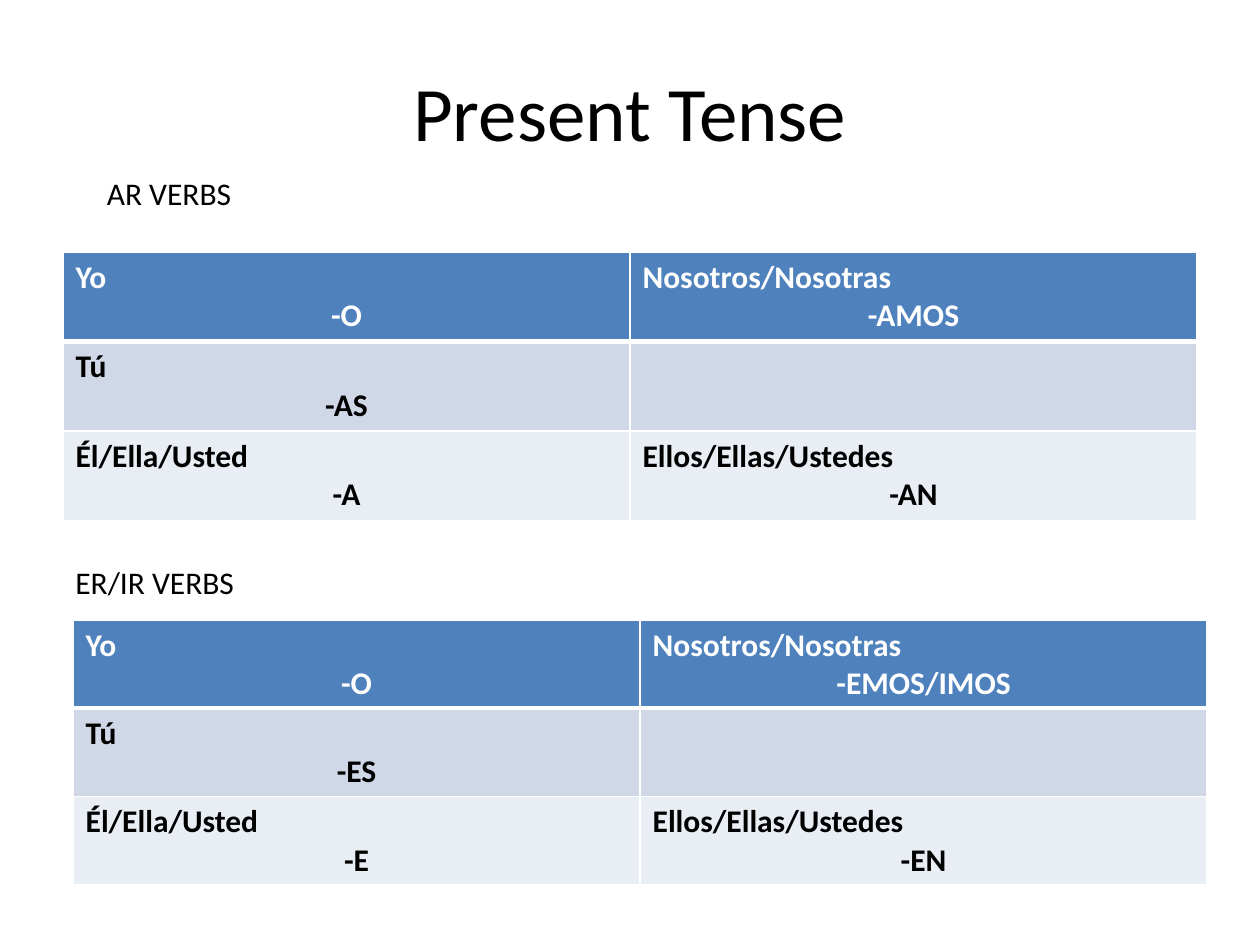
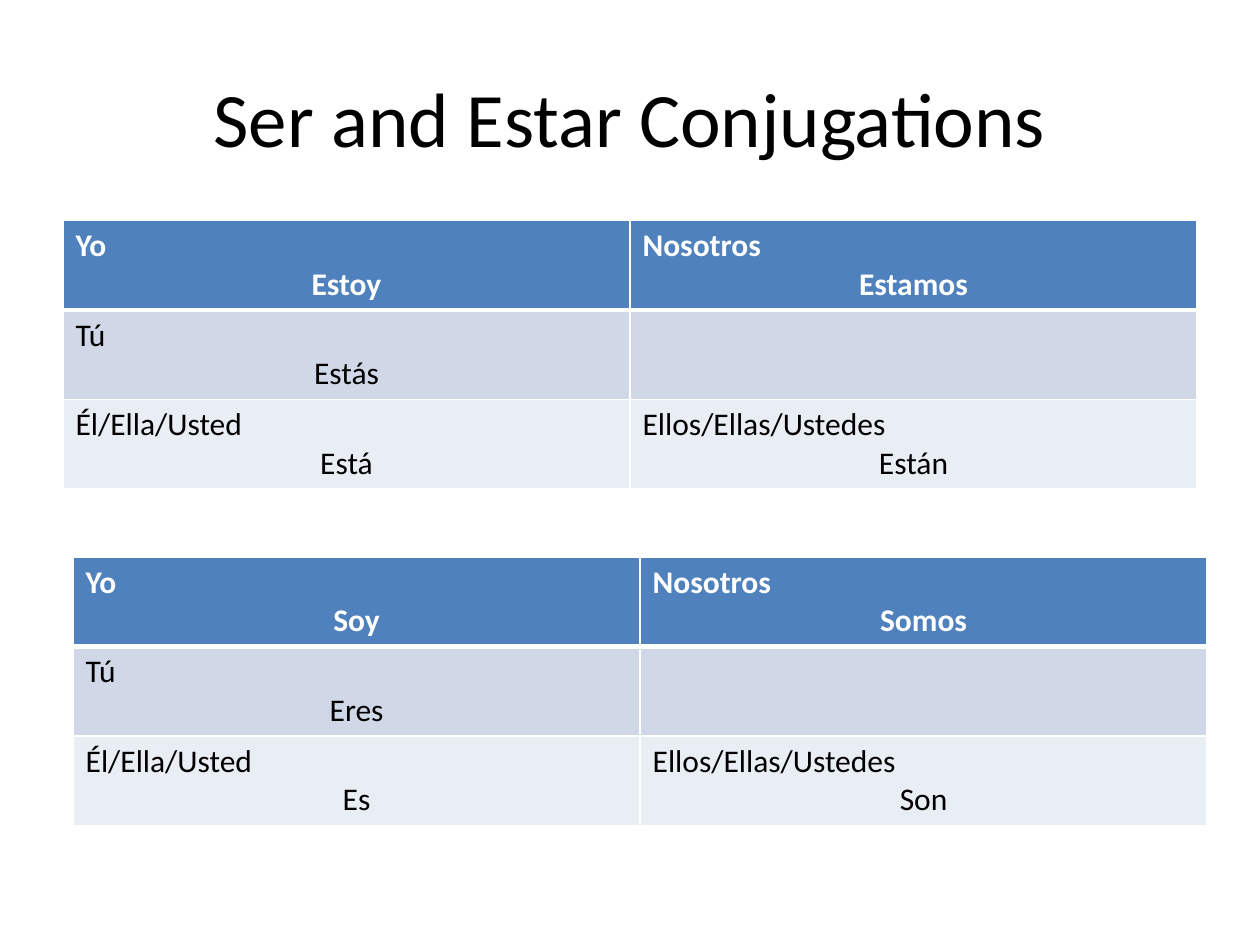
import pptx
import pptx.dml.color
import pptx.enum.text
import pptx.util
from lxml import etree
from pptx.oxml.ns import qn

Inches = pptx.util.Inches
Pt = pptx.util.Pt
ALIGN = pptx.enum.text.PP_ALIGN
FONT = "Calibri"
WHITE, BLACK = "FFFFFF", "000000"
ROW_FILLS = ["4F81BD", "D0D8E8", "E9EDF4"]
TABLE_W, ROW_H = 9, 0.7


def rgb(value):
    """Turn a hex string into a colour."""
    return pptx.dml.color.RGBColor.from_string(value)


def write(p, text, size=18, color=BLACK, bold=False, align=ALIGN.LEFT):
    """Put formatted text in a paragraph."""
    p.alignment = align
    r = p.add_run()
    r.text = text
    r.font.name = FONT
    r.font.size = Pt(size)
    r.font.bold = bold
    r.font.color.rgb = rgb(color)


def add_title_slide(prs, text, top):
    """Add a slide whose title starts at the given height."""
    s = prs.slides.add_slide(prs.slide_layouts[5])
    sp = s.shapes.title
    sp.left, sp.top, sp.width, sp.height = map(Inches, (0.5, top, 9, 1.25))
    tf = sp.text_frame
    tf.vertical_anchor = pptx.enum.text.MSO_ANCHOR.MIDDLE
    write(tf.paragraphs[0], text, size=44, align=ALIGN.CENTER)
    return s


def add_label(s, text, left, top):
    """Add the verb group label above a table."""
    sp = s.shapes.add_textbox(*map(Inches, (left, top, 2.67, 0.4)))
    sp.text_frame.word_wrap = True
    write(sp.text_frame.paragraphs[0], text)


def set_borders(cell, **widths):
    """Draw white cell borders with widths in points by side."""
    tc_pr = cell._tc.get_or_add_tcPr()
    for side in "LRTB":
        ln = etree.SubElement(tc_pr, qn("a:ln" + side), w=str(Pt(widths.get(side, 1))))
        fill = etree.SubElement(ln, qn("a:solidFill"))
        etree.SubElement(fill, qn("a:srgbClr"), val=WHITE)


def add_conjugation(s, left, top, we, forms, bold_body):
    """Add a table of pronouns, each with its verb form centred below."""
    yo, nosotros, tu, el, ellos = forms
    rows = [
        [("Yo", yo), (we, nosotros)],
        [("Tú", tu), None],
        [("Él/Ella/Usted", el), ("Ellos/Ellas/Ustedes", ellos)],
    ]
    box = map(Inches, (left, top, TABLE_W, ROW_H * len(rows)))
    table = s.shapes.add_table(len(rows), 2, *box).table
    edges = [{"B": 3}, {"T": 3}, {}]
    for i, row in enumerate(rows):
        for j, entry in enumerate(row):
            cell = table.cell(i, j)
            set_borders(cell, **edges[i])
            cell.fill.solid()
            cell.fill.fore_color.rgb = rgb(ROW_FILLS[i])
            if entry:
                pronoun, form = entry
                style = {"color": BLACK if i else WHITE, "bold": i == 0 or bold_body}
                tf = cell.text_frame
                write(tf.paragraphs[0], pronoun, **style)
                write(tf.add_paragraph(), form, align=ALIGN.CENTER, **style)


def add_present_tense(prs):
    """Build the slide of regular verb endings."""
    s = add_title_slide(prs, "Present Tense", 0.25)
    we = "Nosotros/Nosotras"
    add_conjugation(s, 0.5, 2, we, ["-O", "-AMOS", "-AS", "-A", "-AN"], True)
    add_label(s, "AR VERBS", 0.75, 1.33)
    add_conjugation(s, 0.58, 4.92, we, ["-O", "-EMOS/IMOS", "-ES", "-E", "-EN"], True)
    add_label(s, "ER/IR VERBS", 0.5, 4.42)


def add_ser_estar(prs):
    """Build the slide of ser and estar forms."""
    s = add_title_slide(prs, "Ser and Estar Conjugations", 0.3)
    estar = ["Estoy", "Estamos", "Estás", "Está", "Están"]
    ser = ["Soy", "Somos", "Eres", "Es", "Son"]
    add_conjugation(s, 0.5, 1.75, "Nosotros", estar, False)
    add_conjugation(s, 0.58, 4.42, "Nosotros", ser, False)


def main():
    """Build and save the presentation."""
    prs = pptx.Presentation()
    prs.slide_width, prs.slide_height = Inches(10), Inches(7.5)
    add_present_tense(prs)
    add_ser_estar(prs)
    prs.save("out.pptx")


if __name__ == "__main__":
    main()
